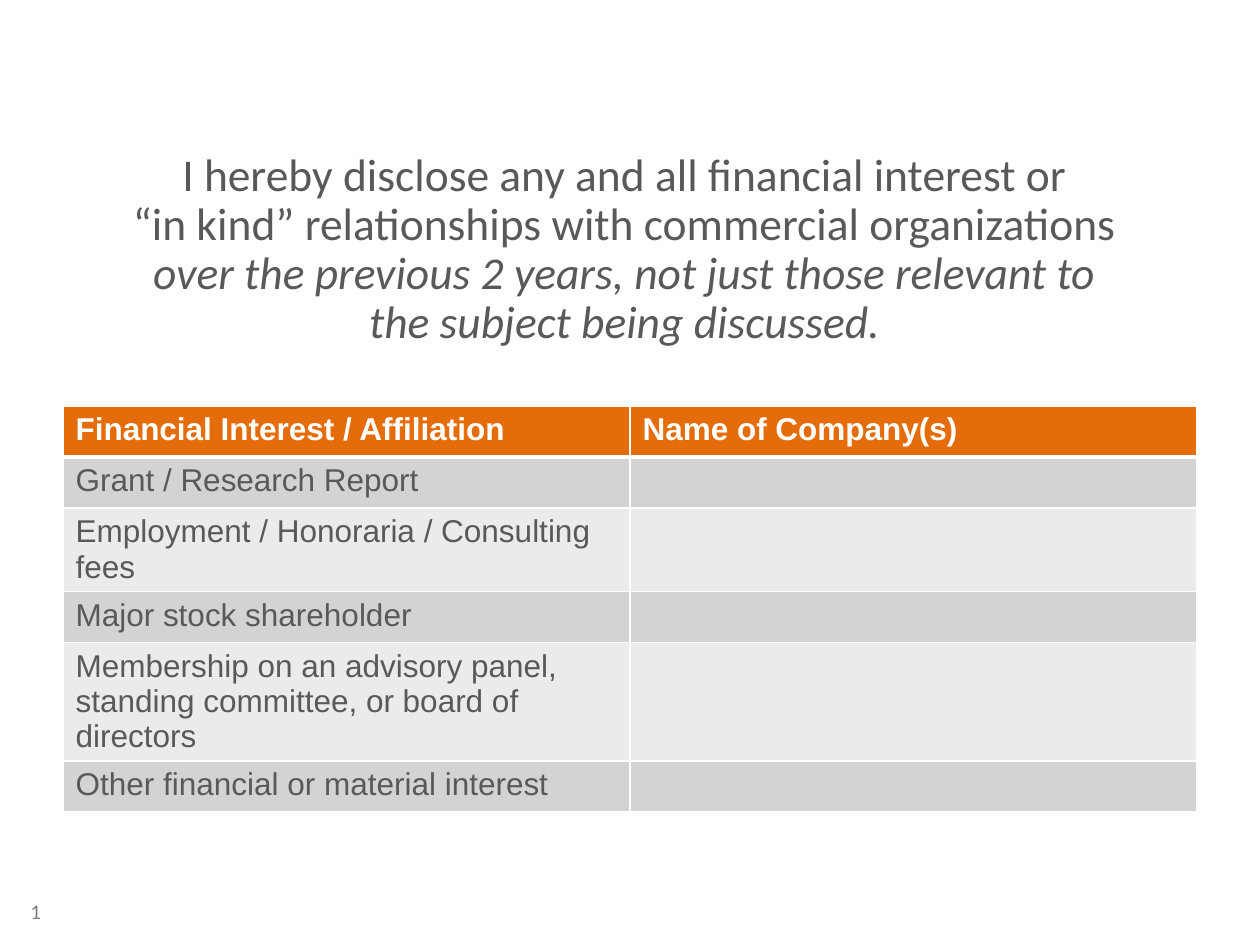
from dataclasses import dataclass

from lxml.etree import SubElement
from pptx import Presentation
from pptx.dml.color import RGBColor
from pptx.enum.text import MSO_ANCHOR, MSO_AUTO_SIZE, PP_ALIGN
from pptx.oxml.ns import qn
from pptx.util import Emu, Pt


@dataclass(frozen=True)
class Theme:
    text: str = "595959"
    muted: str = "808080"
    white: str = "FFFFFF"
    header: str = "E46C0A"
    bands: tuple = ("D3D4D2", "EBEBEA")
    heading_font: str = "Calibri"
    table_font: str = "Arial"
    title_size: int = 26
    table_size: int = 18
    number_size: int = 12
    thin_border: int = 1
    thick_border: int = 3


theme = Theme()


def px(length):
    return Emu(round(length * 914400 / 126))


def add_run(paragraph, text, font_name, size, color, bold=False, italic=False):
    run = paragraph.add_run()
    run.text = text
    run.font.name = font_name
    run.font.size = Pt(size)
    run.font.bold = bold
    run.font.italic = italic
    run.font.color.rgb = RGBColor.from_string(color)


presentation = Presentation()
presentation.slide_width = px(1260)
presentation.slide_height = px(945)
slide = presentation.slides.add_slide(presentation.slide_layouts[5])

title = slide.shapes.title
title.left, title.top, title.width, title.height = px(63), px(161), px(1134), px(178)
title_frame = title.text_frame
title_frame.word_wrap = True
title_frame.auto_size = MSO_AUTO_SIZE.NONE
title_frame.vertical_anchor = MSO_ANCHOR.MIDDLE
title_paragraph = title_frame.paragraphs[0]
title_paragraph.alignment = PP_ALIGN.CENTER
title_paragraph.line_spacing = 0.9
title_lines = [
    ("I hereby disclose any and all financial interest or ", False),
    ("“in kind” relationships with commercial organizations ", False),
    ("over the previous 2 years, not just those relevant to ", True),
    ("the subject being discussed. ", True),
]
for index, (line, italic) in enumerate(title_lines):
    if index:
        title_paragraph.add_line_break()
    add_run(title_paragraph, line, theme.heading_font, theme.title_size, theme.text, italic=italic)

rows = [
    ("Financial Interest / Affiliation", "Name of Company(s)"),
    ("Grant / Research Report", ""),
    ("Employment / Honoraria / Consulting fees", ""),
    ("Major stock shareholder", ""),
    ("Membership on an advisory panel, standing committee, or board of directors", ""),
    ("Other financial or material interest", ""),
]
row_height = 51
table = slide.shapes.add_table(
    len(rows), 2, px(63), px(406), px(1134), px(row_height * len(rows))
).table
for row_index, texts in enumerate(rows):
    is_header = row_index == 0
    table.rows[row_index].height = px(row_height)
    fill_color = theme.header if is_header else theme.bands[(row_index - 1) % 2]
    text_color = theme.white if is_header else theme.text
    for column_index, text in enumerate(texts):
        cell = table.cell(row_index, column_index)
        properties = cell._tc.get_or_add_tcPr()
        for side in ("lnL", "lnR", "lnT", "lnB"):
            below_header = (row_index, side) in ((0, "lnB"), (1, "lnT"))
            width = theme.thick_border if below_header else theme.thin_border
            border = SubElement(properties, qn(f"a:{side}"), w=str(Pt(width)))
            border_fill = SubElement(border, qn("a:solidFill"))
            SubElement(border_fill, qn("a:srgbClr"), val=theme.white)
        cell.fill.solid()
        cell.fill.fore_color.rgb = RGBColor.from_string(fill_color)
        paragraph = cell.text_frame.paragraphs[0]
        if text:
            add_run(paragraph, text, theme.table_font, theme.table_size, text_color, bold=is_header)
        else:
            paragraph.font.size = Pt(theme.table_size)

number_box = slide.shapes.add_textbox(px(18), px(892), px(78), px(50))
number_box.text_frame.word_wrap = True
add_run(number_box.text_frame.paragraphs[0], "1", theme.heading_font, theme.number_size, theme.muted)

presentation.save("out.pptx")
